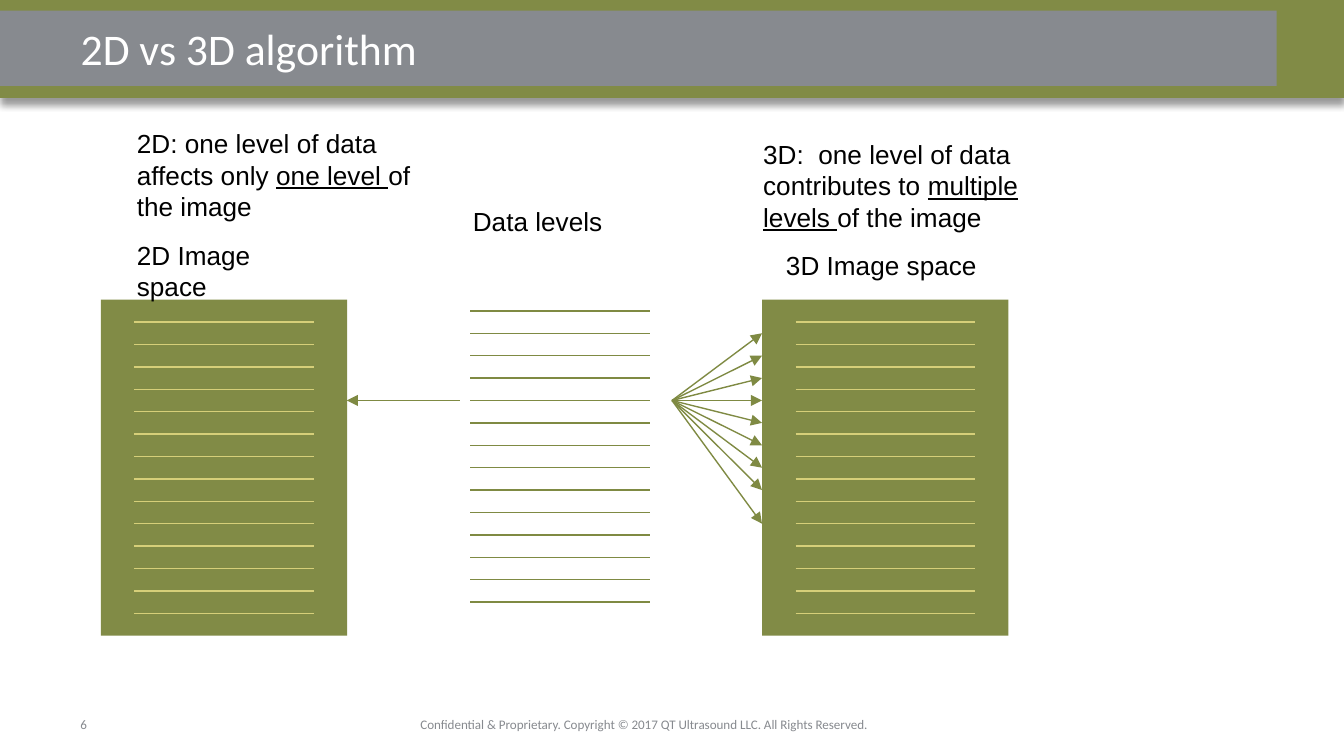
from lxml.etree import SubElement
from pptx import Presentation
from pptx.dml.color import RGBColor
from pptx.enum.shapes import MSO_CONNECTOR, MSO_SHAPE
from pptx.enum.text import MSO_ANCHOR, MSO_AUTO_SIZE, PP_ALIGN
from pptx.oxml.ns import qn
from pptx.util import Inches, Pt

COLORS = {
    "olive": "818B46",
    "line": "7F8A43",
    "pale": "D6CF79",
    "gray": "878A8F",
    "white": "FFFFFF",
    "black": "000000",
}
PITCH = 1 / 6
LEVEL_COUNT = 14
LEVEL_WIDTH = 8 * PITCH
SPACE_TOP = 2.23
SOURCE_Y = SPACE_TOP + 4.5 * PITCH


class SlideBuilder:
    def __init__(self, page):
        self.page = page

    def color(self, name):
        return RGBColor.from_string(COLORS[name])

    def style(self, paragraph, size, font, color):
        paragraph.font.size = Pt(size)
        paragraph.font.name = font
        paragraph.font.color.rgb = self.color(color)

    def rectangle(self, left, top, width, height, color):
        shape = self.page.shapes.add_shape(
            MSO_SHAPE.RECTANGLE, Inches(left), Inches(top), Inches(width), Inches(height))
        shape.fill.solid()
        shape.fill.fore_color.rgb = self.color(color)
        shape.line.fill.background()
        shape.shadow.inherit = False
        return shape

    def drop_shadow(self, shape):
        effects = shape.element.spPr.find(qn("a:effectLst"))
        shadow = SubElement(effects, qn("a:outerShdw"), blurRad=str(Pt(4)), dist=str(Pt(3)),
                            dir="5400000", algn="t", rotWithShape="0")
        shade = SubElement(shadow, qn("a:srgbClr"), val=COLORS["black"])
        SubElement(shade, qn("a:alpha"), val="40000")

    def title(self, text):
        title = self.page.shapes.title
        # The placeholder comes first in the tree; bring it in front of the band.
        title.element.getparent().append(title.element)
        title.left, title.top = Inches(0.5), Inches(0.13)
        title.width, title.height = Inches(7.25), Inches(0.46)
        frame = title.text_frame
        frame.text = text
        frame.auto_size = MSO_AUTO_SIZE.NONE
        frame.vertical_anchor = MSO_ANCHOR.MIDDLE
        paragraph = frame.paragraphs[0]
        paragraph.alignment = PP_ALIGN.LEFT
        self.style(paragraph, 23.4, "Calibri", "white")

    def text(self, left, top, width, height, *parts, underlined=None,
             size=14, font="Arial", color="black", tab=None):
        box = self.page.shapes.add_textbox(
            Inches(left), Inches(top), Inches(width), Inches(height))
        box.text_frame.word_wrap = True
        paragraph = box.text_frame.paragraphs[0]
        if tab:
            tabs = SubElement(paragraph._p.get_or_add_pPr(), qn("a:tabLst"))
            SubElement(tabs, qn("a:tab"), pos=str(Inches(tab)), algn="l")
        self.style(paragraph, size, font, color)
        for part in parts:
            span = paragraph.add_run()
            span.text = part
            if part == underlined:
                span.font.underline = True

    def line(self, start, end, color="line", arrow=False, shapes=None):
        shapes = self.page.shapes if shapes is None else shapes
        connector = shapes.add_connector(
            MSO_CONNECTOR.STRAIGHT, *(Inches(value) for value in (*start, *end)))
        connector.line.color.rgb = self.color(color)
        connector.line.width = Pt(0.75)
        if arrow:
            SubElement(connector.line._get_or_add_ln(), qn("a:tailEnd"), type="triangle")
        SubElement(connector.element.spPr, qn("a:effectLst"))

    def levels(self, left, top, color):
        """Draw one grouped stack of evenly spaced level lines."""
        group = self.page.shapes.add_group_shape()
        for index in range(LEVEL_COUNT):
            y = top + index * PITCH
            self.line((left, y), (left + LEVEL_WIDTH, y), color, shapes=group.shapes)

    def image_space(self, left):
        self.rectangle(left, SPACE_TOP, 11 * PITCH, 15 * PITCH, "olive")
        self.levels(left + 0.25, SPACE_TOP + PITCH, "pale")


def main():
    deck = Presentation()
    deck.slide_width, deck.slide_height = Inches(10), Inches(10 * 9 / 16)
    builder = SlideBuilder(deck.slides.add_slide(deck.slide_layouts[5]))

    band = builder.rectangle(0, 0, 10, 0.73, "olive")
    builder.drop_shadow(band)
    builder.rectangle(-0.01, 0.08, 9.51, 0.56, "gray")
    builder.text(0.5, 5.28, 9, 0.22,
                 "6\tConfidential & Proprietary. Copyright © 2017 QT Ultrasound LLC. "
                 "All Rights Reserved.",
                 size=7, font="Calibri", color="gray", tab=2.53)
    builder.title("2D vs 3D algorithm")

    builder.image_space(0.75)
    builder.levels(3.5, SPACE_TOP + PITCH / 2, "line")
    builder.image_space(5.67)

    builder.line((3.42, SOURCE_Y), (2.58, SOURCE_Y), arrow=True)
    fan = [SOURCE_Y + step * PITCH for step in (-3, -2, -1, 0, 1, 2, 3, 4, 5.5)]
    for y in fan:
        builder.line((5, SOURCE_Y), (5.67, y), arrow=True)

    builder.text(3.42, 1.48, 1.5, 0.34, "Data levels")
    builder.text(5.58, 0.98, 2.42, 0.81, "3D:  one level of data contributes to ",
                 "multiple levels ", "of the image", underlined="multiple levels ")
    builder.text(0.92, 1.73, 1.5, 0.57, "2D Image space")
    builder.text(0.92, 0.9, 2.33, 0.81, "2D: one level of data affects only ",
                 "one level ", "of the image", underlined="one level ")
    builder.text(5.75, 1.81, 1.67, 0.34, "3D Image space")

    deck.save("out.pptx")


if __name__ == "__main__":
    main()
